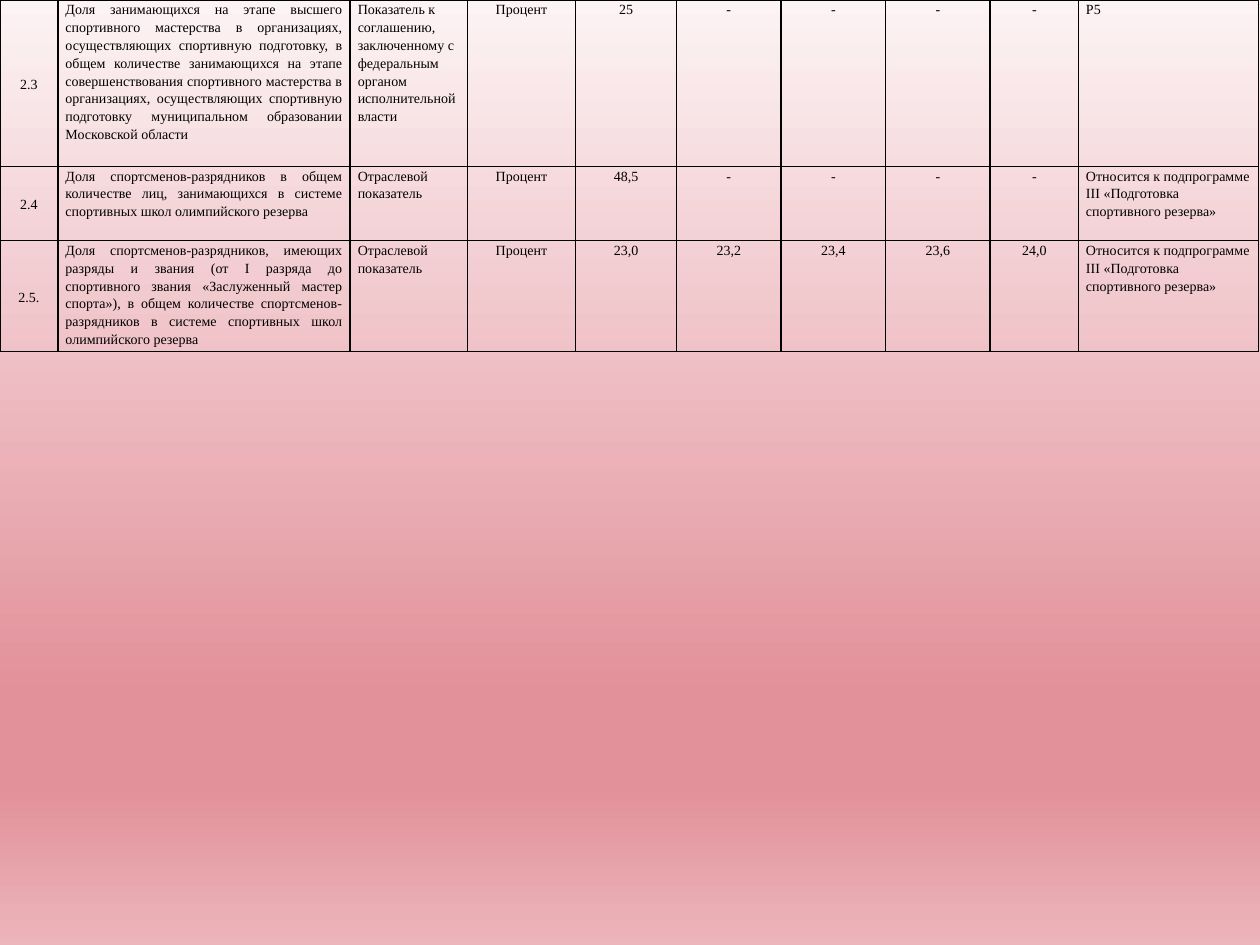
import pptx
import pptx.util
import pptx.dml.color
import pptx.enum.text
import pptx.oxml
import pptx.oxml.ns
import lxml.etree

ALIGN = pptx.enum.text.PP_ALIGN
ANCHOR = pptx.enum.text.MSO_ANCHOR
INCH = pptx.util.Inches
PT = pptx.util.Pt

FONT, INK = "Times New Roman", "000000"
SIZE = (10, 7.5)
STOPS = [(0, "FCF3F4"), (74, "E29099"), (83, "E29099"), (100, "ECB5BB")]
COLS = [0.46, 2.32, 0.93, 0.86, 0.8, 0.83, 0.83, 0.83, 0.7, 1.43]
HEIGHTS = [1.32, 0.59, 0.88]
UNIT = "Процент"
BRANCH = "Отраслевой показатель"
RESERVE = "Относится к подпрограмме III «Подготовка спортивного резерва»"
ROWS = [
    ["2.3",
     "Доля занимающихся на этапе высшего спортивного мастерства в организациях, "
     "осуществляющих спортивную подготовку, в общем количестве занимающихся на этапе "
     "совершенствования спортивного мастерства в организациях, осуществляющих "
     "спортивную подготовку муниципальном образовании Московской области",
     "Показатель к соглашению, заключенному с федеральным органом исполнительной власти",
     UNIT, "25", "-", "-", "-", "-", "Р5"],
    ["2.4",
     "Доля спортсменов-разрядников в общем количестве лиц, занимающихся в системе "
     "спортивных школ олимпийского резерва",
     BRANCH, UNIT, "48,5", "-", "-", "-", "-", RESERVE],
    ["2.5.",
     "Доля спортсменов-разрядников, имеющих разряды и звания (от I разряда до "
     "спортивного звания «Заслуженный мастер спорта»), в общем количестве "
     "спортсменов-разрядников в системе спортивных школ олимпийского резерва",
     BRANCH, UNIT, "23,0", "23,2", "23,4", "23,6", "24,0", RESERVE],
]
ALIGNS = {1: ALIGN.JUSTIFY, 2: ALIGN.LEFT, 9: ALIGN.LEFT}


def color(code):
    return pptx.dml.color.RGBColor.from_string(code)


def add(node, tag, **attrs):
    child = lxml.etree.SubElement(node, pptx.oxml.ns.qn(tag))
    for key, value in attrs.items():
        child.set(key, str(value))
    return child


def paint(slide):
    fill = slide.background.fill
    fill.gradient()
    fill.gradient_angle = 270
    stops = slide.element.find(".//" + pptx.oxml.ns.qn("a:gsLst"))
    for stop in list(stops):
        stops.remove(stop)
    for share, code in STOPS:
        add(add(stops, "a:gs", pos=share * 1000), "a:srgbClr", val=code)


def frame(cell):
    props = cell._tc.get_or_add_tcPr()
    for side in "LRTB":
        line = add(props, "a:ln" + side, w=PT(1))
        add(add(line, "a:solidFill"), "a:srgbClr", val=INK)
    cell.fill.background()


def write(cell, text, col):
    cell.margin_left = cell.margin_right = INCH(0.06)
    cell.margin_top = cell.margin_bottom = 0
    cell.vertical_anchor = ANCHOR.TOP if col else ANCHOR.MIDDLE
    para = cell.text_frame.paragraphs[0]
    para.alignment = ALIGNS.get(col, ALIGN.CENTER)
    para.line_spacing = 1.15
    if 3 <= col <= 8:
        para.space_after = PT(10)
    run = para.add_run()
    run.text = text
    run.font.name = FONT
    run.font.size = PT(8)
    run.font.bold = False
    run.font.color.rgb = color(INK)


def main():
    deck = pptx.Presentation()
    deck.slide_width, deck.slide_height = map(INCH, SIZE)
    slide = deck.slides.add_slide(deck.slide_layouts[6])
    paint(slide)
    table = slide.shapes.add_table(
        len(ROWS), len(COLS), 0, 0, INCH(SIZE[0]), INCH(sum(HEIGHTS))).table
    table.first_row = table.horz_banding = False
    for col, width in zip(table.columns, COLS):
        col.width = INCH(width)
    for row, height in zip(table.rows, HEIGHTS):
        row.height = INCH(height)
    for r, texts in enumerate(ROWS):
        for c, text in enumerate(texts):
            cell = table.cell(r, c)
            frame(cell)
            write(cell, text, c)
    deck.save("out.pptx")


if __name__ == "__main__":
    main()
